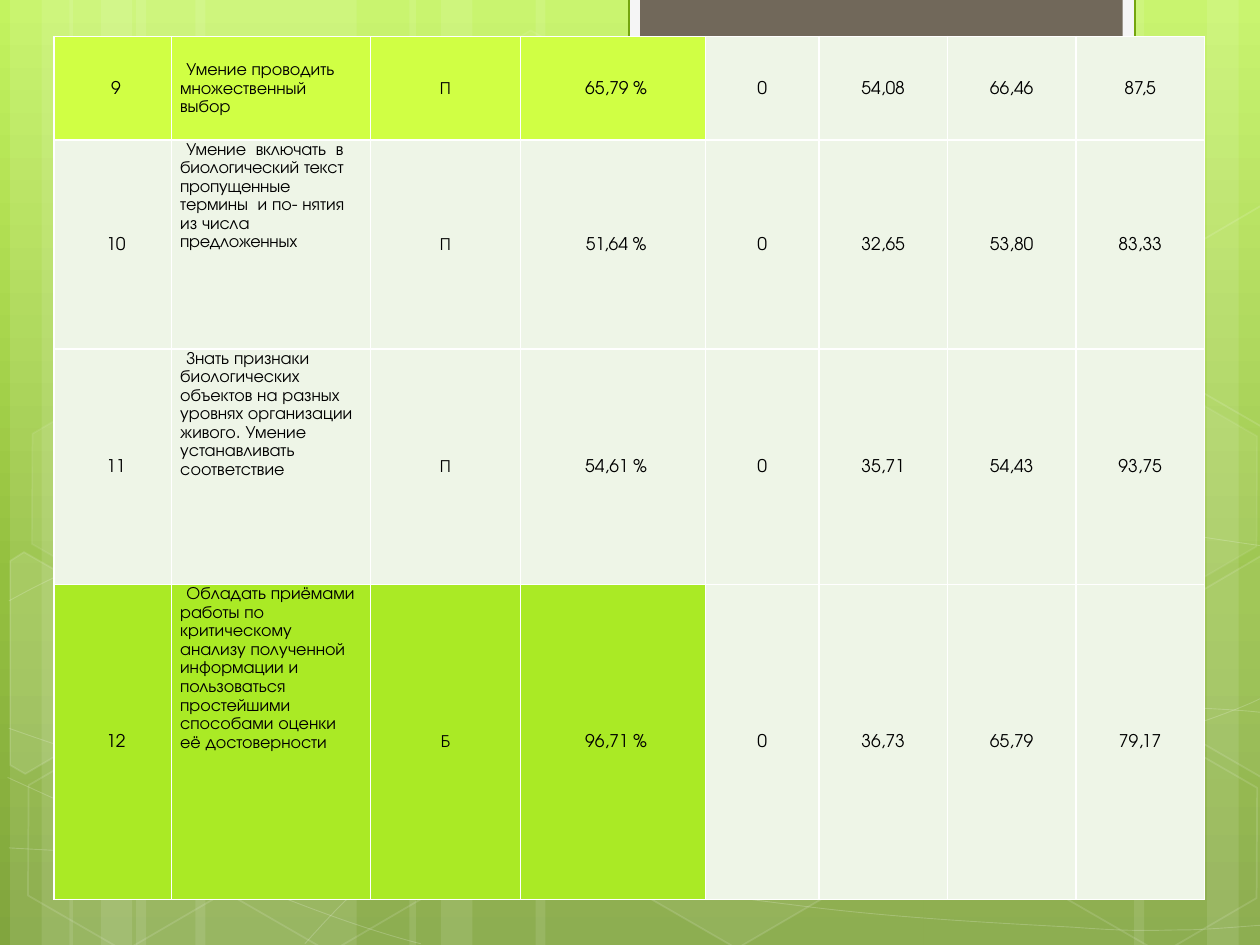
from dataclasses import dataclass
from math import cos, radians, sin
from typing import NamedTuple, Optional

from lxml.etree import SubElement
from pptx import Presentation
from pptx.dml.color import RGBColor
from pptx.enum.shapes import MSO_SHAPE as Shape
from pptx.enum.text import MSO_ANCHOR as Anchor, PP_ALIGN as Align
from pptx.oxml import parse_xml
from pptx.oxml.ns import nsdecls, qn
from pptx.util import Inches, Pt


@dataclass(frozen=True)
class Theme:
    font: str = "TeX Gyre Adventor"
    body_size: float = 10
    text: str = "000000"
    white: str = "FFFFFF"
    cell: str = "EEF5E7"
    lime: str = "D0FF44"
    green: str = "AAEA25"
    tab_frame: str = "F5F5F5"
    tab_line: str = "74A510"
    tab: str = "71685A"
    background: tuple = ((0, "C3F35F"), (62, "93BF3F"), (100, "81A53E"))


class Paint(NamedTuple):
    color: str
    alpha: int = 100
    width: float = 1


class Box(NamedTuple):
    left: float
    top: float
    width: float
    height: float


class Hexagon(NamedTuple):
    left: float
    top: float
    fill_alpha: int
    line_alpha: int


class CutHexagon(NamedTuple):
    center: tuple
    points: list
    fill_alpha: int


class SkillRow(NamedTuple):
    height: float
    highlight: str
    skill_anchor: Anchor
    number: str
    skill: str
    results: tuple


THEME = Theme()
TILT = 30

# Translucent vertical bands: left, width, rotation
BANDS = [(1.08, 1.75, 0), (0.08, 0.5, 0), (0.33, 0.83, 0), (1.55, 1.75, 0), (0.55, 0.5, 0),
         (0.8, 0.83, 0), (7.33, 1.75, 180), (9.58, 0.5, 180), (9, 0.83, 180),
         (4.25, 3.08, 0), (3.25, 0.5, 0), (3.5, 0.83, 0)]

# Thin waves: a start point, then cubic segments of three points each
WAVES = [
    [(0.07, 6.73), (0.61, 6.76), (1.15, 6.79), (1.9, 6.78), (2.65, 6.77), (3.58, 6.75),
     (4.58, 6.65), (5.58, 6.55), (7, 6.36), (7.92, 6.17), (8.83, 5.98), (9.77, 5.68), (10.07, 5.51)],
    [(0.07, 4.77), (0.36, 4.61), (0.65, 4.46), (1.21, 4.31), (1.78, 4.16), (2.59, 3.94),
     (3.47, 3.87), (4.36, 3.8), (5.44, 3.79), (6.54, 3.87), (7.64, 3.95), (9.47, 4.26), (10.07, 4.34)],
    [(0.06, 6.17), (1.27, 6.72), (2.47, 7.27), (3.34, 7.49)],
    [(0.07, 5.78), (0.38, 5.89), (0.7, 6), (1.28, 6.16), (1.86, 6.31), (2.73, 6.56), (3.57, 6.73),
     (4.4, 6.9), (5.45, 7.08), (6.28, 7.18), (7.11, 7.29), (8, 7.33), (8.53, 7.36),
     (9.05, 7.4), (9.19, 7.38), (9.45, 7.38), (9.71, 7.37), (9.89, 7.35), (10.07, 7.34)],
    [(2.42, 7.49), (2.6, 7.29), (2.78, 7.09), (3.02, 6.91), (3.26, 6.73), (3.6, 6.53), (3.88, 6.39),
     (4.16, 6.25), (4.33, 6.19), (4.7, 6.09), (5.06, 5.99), (5.73, 5.85), (6.08, 5.78),
     (6.44, 5.71), (6.49, 5.71), (6.8, 5.69), (7.11, 5.66), (7.6, 5.63), (7.94, 5.62),
     (8.29, 5.61), (8.86, 5.62), (8.86, 5.62), (8.86, 5.62), (9.53, 5.62), (9.53, 5.62),
     (9.71, 5.63), (9.88, 5.64), (9.97, 5.65), (10.06, 5.66), (10.03, 5.65), (10.06, 5.66)],
]

HEXAGONS = [Hexagon(3.34, 0.36, 4, 8), Hexagon(4.97, 5.89, 6, 12), Hexagon(0.11, 5.91, 0, 12),
            Hexagon(0.14, 3.12, 7, 8), Hexagon(1.74, 5.92, 0, 12), Hexagon(7.53, 4.53, 10, 12),
            Hexagon(8.34, 5.93, 0, 12), Hexagon(8.34, 3.14, 7, 8)]

# Hexagons cut by the slide edge, with their corners as seen after the tilt
CUT_HEXAGONS = [
    CutHexagon((0.36, 5.35), [(0.08, 4.45), (0.19, 4.38), (0.96, 4.82),
                              (0.95, 5.7), (0.2, 6.14), (0.08, 6.07)], 10),
    CutHexagon((9.85, 5.2), [(9.26, 4.85), (10.01, 4.41), (10.09, 4.46),
                             (10.09, 6.13), (10.02, 6.17), (9.26, 5.73)], 4),
    CutHexagon((9.85, 2.41), [(9.26, 2.07), (10.01, 1.63), (10.1, 1.68),
                              (10.09, 3.35), (10.02, 3.39), (9.26, 2.95)], 0),
]

COLUMN_WIDTHS = [0.93, 1.58, 1.19, 1.47, 0.9, 1.02, 1.02, 1.02]
FIRST_LINE_INDENTS = [0.05, 0.05, -0.08, 0.05, 0, 0, 0, 0]
SKILL_COLUMN = 1
HIGHLIGHTED_COLUMNS = 4
# In a skill, "|" starts a run; a run opening with a key below takes that letter spacing in points
SPACINGS = {"+": 0.1, "-": -0.1, "=": -0.2}
ROWS = [
    SkillRow(0.82, THEME.lime, Anchor.MIDDLE, "9", "Умение проводить множественный выбор",
             ("П", "65,79 %", "0", "54,08", "66,46", "87,5")),
    SkillRow(1.66, THEME.cell, Anchor.TOP, "10",
             "-Умени|е  |-включат|ь  в |-биологически|й |-текс|т  |-пропущенны|е  |=т|-ермин|ы  и |"
             "по- няти|-я |-и|з |-числ|а |-предложенн|=ы|х",
             ("П", "51,64 %", "0", "32,65", "53,80", "83,33")),
    SkillRow(1.87, THEME.cell, Anchor.TOP, "11",
             "Знать п|+р|изнаки биологичес|-к|их объектов |+н|а разных |+у|"
             "ровнях организации живого. Умение |+у|станавливать |+с|оответствие",
             ("П", "54,61 %", "0", "35,71", "54,43", "93,75")),
    SkillRow(2.5, THEME.green, Anchor.TOP, "12",
             "Обладать приёмами работы по критическому анализу пол|+у|ченной информац|-и|"
             "и и пользоваться простейшими способами оценки её достоверности",
             ("Б", "96,71 %", "0", "36,73", "65,79", "79,17")),
]


def apply_paint(fill, paint: Paint) -> None:
    fill.solid()
    fill.fore_color.rgb = RGBColor.from_string(paint.color)
    if paint.alpha < 100:
        SubElement(fill._xPr.find(qn("a:solidFill"))[0], qn("a:alpha"), val=str(paint.alpha * 1000))


def style(shape, fill: Optional[Paint] = None, line: Optional[Paint] = None) -> None:
    shape.shadow.inherit = False
    if fill and fill.alpha:
        apply_paint(shape.fill, fill)
    else:
        shape.fill.background()
    if line:
        shape.line.width = Pt(line.width)
        apply_paint(shape.line.fill, line)
    else:
        shape.line.fill.background()


def add_preset(slide, box: Box, kind=Shape.RECTANGLE, rotation: float = 0, **paints):
    shape = slide.shapes.add_shape(kind, *map(Inches, box))
    shape.rotation = rotation
    style(shape, **paints)
    return shape


def add_outline(slide, points: list, close: bool, **paints):
    start, *rest = [(Inches(x), Inches(y)) for x, y in points]
    builder = slide.shapes.build_freeform(*start)
    builder.add_line_segments(rest, close=close)
    shape = builder.convert_to_shape()
    style(shape, **paints)
    return shape


def add_wave(slide, controls: list, line: Paint) -> None:
    shape = add_outline(slide, controls[::3], False, line=line)
    for i, segment in enumerate(list(shape._element.iter(qn("a:lnTo")))):
        segment.tag = qn("a:cubicBezTo")
        segment.remove(segment[0])
        for x, y in controls[3 * i + 1:3 * i + 4]:
            SubElement(segment, qn("a:pt"), x=str(Inches(x) - shape.left), y=str(Inches(y) - shape.top))


def untilt(point: tuple, center: tuple) -> tuple:
    dx, dy = point[0] - center[0], point[1] - center[1]
    c, s = cos(radians(TILT)), sin(radians(TILT))
    return center[0] + dx * c + dy * s, center[1] - dx * s + dy * c


def write_text(frame, text: str, *, align=Align.CENTER, indent: float = 0, right: float = 0) -> None:
    paragraph = frame.paragraphs[0]
    paragraph.alignment, paragraph.line_spacing = align, 1.15
    properties = paragraph._p.get_or_add_pPr()
    for name, length in (("marL", 0), ("marR", right), ("indent", indent)):
        properties.set(name, str(Inches(length)))
    for part in text.split("|"):
        spacing = SPACINGS.get(part[0], 0)
        run = paragraph.add_run()
        run.text = part[1:] if spacing else part
        run.font.name, run.font.size = THEME.font, Pt(THEME.body_size)
        run.font.color.rgb = RGBColor.from_string(THEME.text)
        if spacing:
            run._r.get_or_add_rPr().set("spc", str(round(spacing * 100)))


def format_cell(cell, fill: str, anchor) -> None:
    cell.margin_left = cell.margin_right = Inches(0.07)
    cell.margin_top = cell.margin_bottom = 0
    cell.vertical_anchor = anchor
    for side in "LRTB":
        border = SubElement(cell._tc.get_or_add_tcPr(), qn(f"a:ln{side}"), w=str(Pt(1)))
        SubElement(SubElement(border, qn("a:solidFill")), qn("a:srgbClr"), val=THEME.white)
    apply_paint(cell.fill, Paint(fill))


def add_background(slide) -> None:
    fill = slide.background.fill
    fill.gradient()
    fill.gradient_angle = 270
    stops = fill._fill._gradFill.find(qn("a:gsLst"))
    stops.clear()
    for position, color in THEME.background:
        stops.append(parse_xml(f'<a:gs {nsdecls("a")} pos="{position * 1000}">'
                               f'<a:srgbClr val="{color}"/></a:gs>'))


def add_decoration(slide) -> None:
    white = THEME.white
    for left, width, rotation in BANDS:
        add_preset(slide, Box(left, 0, width, 7.5), rotation=rotation, fill=Paint(white, 10))
    for wave in WAVES:
        add_wave(slide, wave, Paint(white, 20, 0.5))
    for item in HEXAGONS:
        hexagon = add_preset(slide, Box(item.left, item.top, 1.75, 1.52), Shape.HEXAGON, TILT,
                             fill=Paint(white, item.fill_alpha), line=Paint(white, item.line_alpha))
        hexagon.adjustments[0] = 0.285
    for item in CUT_HEXAGONS:
        corners = [untilt(point, item.center) for point in item.points]
        add_outline(slide, corners, True, fill=Paint(white, item.fill_alpha),
                    line=Paint(white, 12)).rotation = TILT
    # Content panel and the tab at the top edge
    add_preset(slide, Box(0.5, 0.36, 9, 6.76), fill=Paint(white), line=Paint(THEME.text, width=0.5))
    add_preset(slide, Box(4.99, -0.02, 4.02, 0.76),
               fill=Paint(THEME.tab_frame), line=Paint(THEME.tab_line, width=1.25))
    add_preset(slide, Box(5.08, -0.02, 3.83, 0.68), fill=Paint(THEME.tab))


def add_skill_table(slide) -> None:
    box = Box(0.43, 0.29, sum(COLUMN_WIDTHS), sum(row.height for row in ROWS))
    table = slide.shapes.add_table(len(ROWS), len(COLUMN_WIDTHS), *map(Inches, box)).table
    table.first_row = table.horz_banding = False
    for column, width in zip(table.columns, COLUMN_WIDTHS):
        column.width = Inches(width)
    for r, row in enumerate(ROWS):
        table.rows[r].height = Inches(row.height)
        for c, value in enumerate((row.number, row.skill, *row.results)):
            cell, is_skill = table.cell(r, c), c == SKILL_COLUMN
            format_cell(cell, row.highlight if c < HIGHLIGHTED_COLUMNS else THEME.cell,
                        row.skill_anchor if is_skill else Anchor.MIDDLE)
            write_text(cell.text_frame, value, indent=FIRST_LINE_INDENTS[c],
                       align=Align.LEFT if is_skill else Align.CENTER, right=0.03 if is_skill else 0)


def main() -> None:
    deck = Presentation()
    deck.slide_width, deck.slide_height = Inches(10), Inches(7.5)
    slide = deck.slides.add_slide(deck.slide_layouts[6])
    add_background(slide)
    add_decoration(slide)
    add_skill_table(slide)
    deck.save("out.pptx")


if __name__ == "__main__":
    main()
